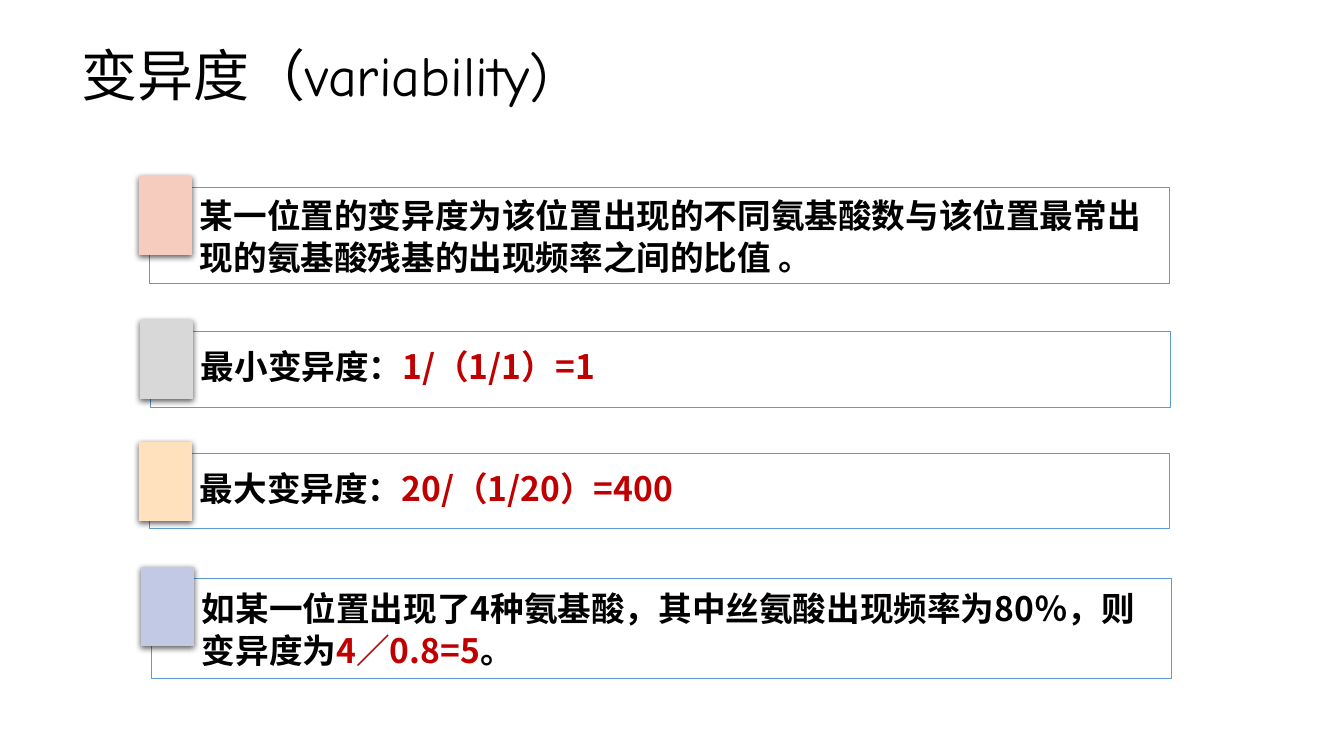
from lxml import etree
from pptx import Presentation
from pptx import util as u
from pptx.dml.color import RGBColor
from pptx.enum import shapes, text
from pptx.oxml.ns import qn

PX = 914400 / 100.8
CJK, LATIN = "Noto Sans CJK SC", "Comic Neue"
BLACK, RED, WHITE, BORDER = "000000", "C00000", "FFFFFF", "5B9BD5"
INSET = 4


def px(n):
    return u.Emu(round(n * PX))


def color(value):
    return RGBColor.from_string(value)


def add_alpha(clr, percent):
    etree.SubElement(clr, qn("a:alpha"), val=str(percent * 1000))


def add_shadow(props, alpha, blur, dist, angle):
    """Append an outer shadow; blur and dist are in points, angle in degrees."""
    effects = etree.SubElement(props, qn("a:effectLst"))
    shadow = etree.SubElement(
        effects, qn("a:outerShdw"), blurRad=str(u.Pt(blur)), dist=str(u.Pt(dist)),
        dir=str(angle * 60000), algn="ctr", rotWithShape="0")
    add_alpha(etree.SubElement(shadow, qn("a:srgbClr"), val=BLACK), alpha)


def add_run(p, words, size=24, font=CJK, fill=BLACK, bold=False, shadow=False):
    r = p.add_run()
    r.text = words
    r.font.size = u.Pt(size)
    r.font.bold = bold
    r.font.color.rgb = color(fill)
    props = r.font.fill._xPr
    if shadow:
        add_shadow(props, 43, 3, 3, 45)
    r.font.name = font
    etree.SubElement(props, qn("a:ea"), typeface=CJK)


def setup_frame(sp, left, side, top):
    tf = sp.text_frame
    tf.word_wrap = True
    tf.vertical_anchor = text.MSO_ANCHOR.MIDDLE
    tf.margin_left, tf.margin_right = px(left), px(side)
    tf.margin_top = tf.margin_bottom = px(top)
    p = tf.paragraphs[0]
    p.alignment = text.PP_ALIGN.LEFT
    return p


def add_rect(slide, x, y, w, h, fill):
    sp = slide.shapes.add_shape(
        shapes.MSO_SHAPE.RECTANGLE, px(x), px(y), px(w), px(h))
    sp.fill.solid()
    sp.fill.fore_color.rgb = color(fill)
    return sp


def add_title(slide, x, y, w, h):
    sp = slide.shapes.add_textbox(px(x), px(y), px(w), px(h))
    p = setup_frame(sp, 10, 10, 5)
    p.line_spacing = 0.9
    add_run(p, "变异度（variability)", size=40, font=LATIN, shadow=True)


def add_card(slide, x, y, w, h, tab_fill, spacing, runs):
    """Bordered statement with a coloured tab over its top left corner."""
    box = add_rect(slide, x, y, w, h, WHITE)
    add_alpha(box._element.spPr.find(".//" + qn("a:srgbClr")), 40)
    box.line.color.rgb = color(BORDER)
    box.line.width = u.Pt(0.5)
    box.shadow.inherit = False
    p = setup_frame(box, 51, INSET, INSET)
    p.line_spacing = spacing
    for words, fill in runs:
        add_run(p, words, fill=fill, bold=True)

    tab = add_rect(slide, x - 10, y - 11, 53, 79, tab_fill)
    tab.line.fill.background()
    add_shadow(tab._element.spPr, 63, 4.5, 1.5, 90)


CARDS = [
    (149, 187, 96, "F6CCBE", u.Pt(30),
     [("某一位置的变异度为该位置出现的不同氨基酸数与该位置最常出现的氨基酸残基的出现频率之间的比值 。", BLACK)]),
    (150, 331, 76, "D8D8D8", 0.9,
     [("最小变异度：", BLACK), ("1/（1/1）=1", RED)]),
    (149, 453, 75, "FFE2BD", 0.9,
     [("最大变异度：", BLACK), ("20/（1/20）=400", RED)]),
    (151, 578, 100, "C1C9E4", u.Pt(30),
     [("如某一位置出现了4种氨基酸，其中丝氨酸出现频率为80％，则变异度为", BLACK),
      ("4／0.8=5", RED), ("。", BLACK)]),
]


def main():
    prs = Presentation()
    prs.slide_width, prs.slide_height = px(1344), px(756)
    slide = prs.slides.add_slide(prs.slide_layouts[6])
    add_title(slide, 72, 15, 723, 126)
    for x, y, h, tab_fill, spacing, runs in CARDS:
        add_card(slide, x, y, 1020, h, tab_fill, spacing, runs)
    prs.save("out.pptx")


if __name__ == "__main__":
    main()
